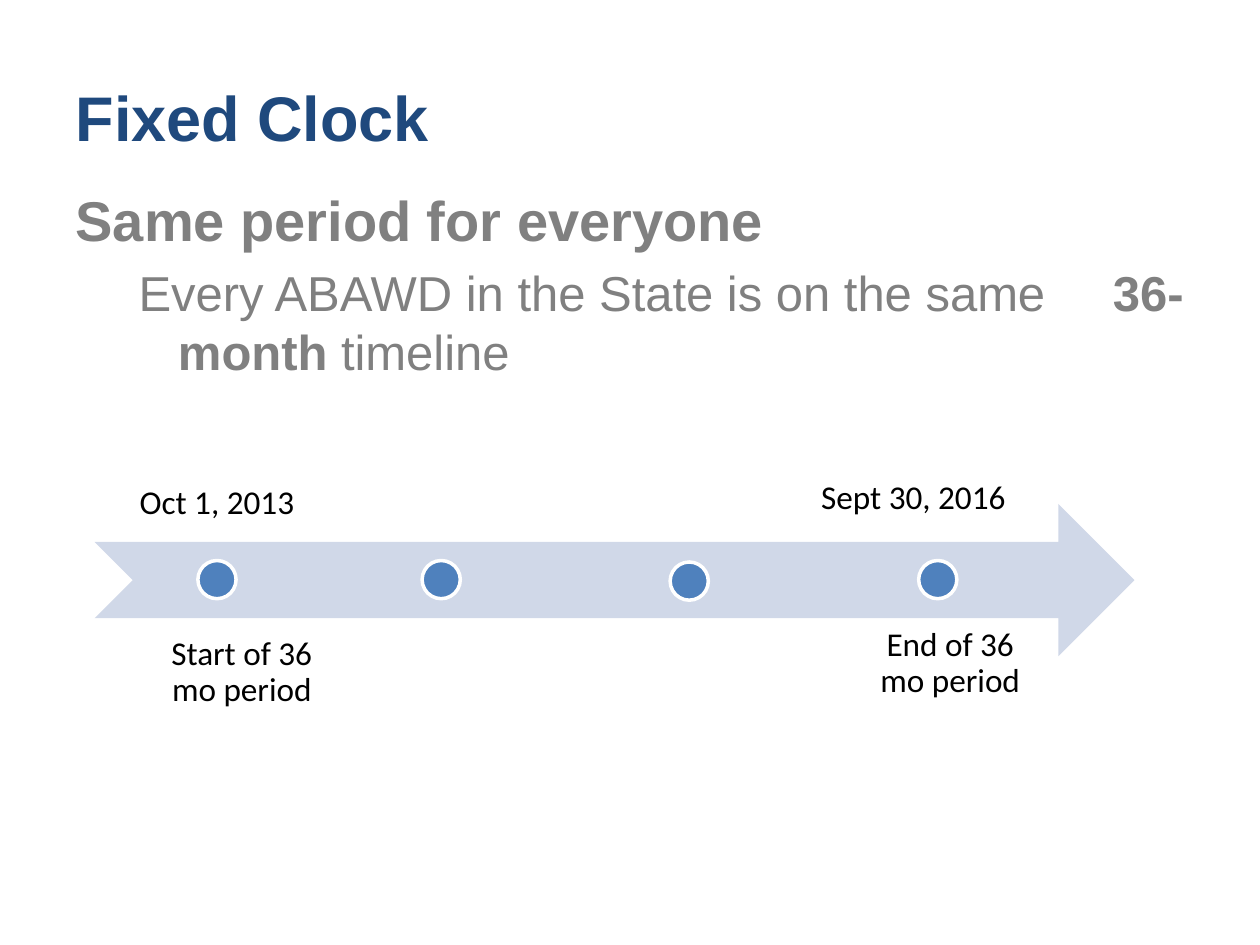
from lxml import etree
from pptx import Presentation
from pptx.dml.color import RGBColor
from pptx.enum.shapes import MSO_SHAPE
from pptx.enum.text import MSO_ANCHOR, PP_ALIGN
from pptx.oxml.ns import qn
from pptx.util import Cm, Pt

NAVY = RGBColor(0x1F, 0x49, 0x7D)
GRAY = RGBColor(0x80, 0x80, 0x80)
BLACK = RGBColor(0, 0, 0)
WHITE = RGBColor(0xFF, 0xFF, 0xFF)
PALE_BLUE = RGBColor(0xD0, 0xD8, 0xE8)
BLUE = RGBColor(0x4F, 0x81, 0xBD)
TOP, MIDDLE, BOTTOM = MSO_ANCHOR.TOP, MSO_ANCHOR.MIDDLE, MSO_ANCHOR.BOTTOM
LEFT, CENTER, RIGHT = PP_ALIGN.LEFT, PP_ALIGN.CENTER, PP_ALIGN.RIGHT


def add_text(p, text, size, color=GRAY, font="Arial", bold=False):
    r = p.add_run()
    r.text = text
    r.font.size = Pt(size)
    r.font.name = font
    r.font.bold = bold
    r.font.color.rgb = color
    return r


def place(sp, left, top, width, height):
    sp.left, sp.top, sp.width, sp.height = Cm(left), Cm(top), Cm(width), Cm(height)


prs = Presentation()
prs.slide_width, prs.slide_height = Cm(25.4), Cm(19.05)
s = prs.slides.add_slide(prs.slide_layouts[1])

# Title and body
title = s.shapes.title
place(title, 1.27, 0.76, 22.86, 3.18)
p = title.text_frame.paragraphs[0]
p.alignment = LEFT
add_text(p, "Fixed Clock", 36, NAVY, bold=True)

body = s.placeholders[1]
place(body, 1.27, 3.61, 22.86, 13.41)
tf = body.text_frame
heading, detail = tf.paragraphs[0], tf.add_paragraph()
detail.level = 1
for p in (heading, detail):
    etree.SubElement(p._p.get_or_add_pPr(), qn("a:buNone"))
heading.space_before = Pt(0)
add_text(heading, "Same period for everyone", 32, bold=True)
add_text(detail, "Every ABAWD in the State is on the same", 28)
gap = add_text(detail, " ", 28)
gap.font._element.set("spc", "3100")  # widens the one space before "36-month"
add_text(detail, "36-month ", 28, bold=True)
add_text(detail, "timeline", 28)

# Timeline
timeline = s.shapes.add_group_shape().shapes
arrow = timeline.add_shape(MSO_SHAPE.NOTCHED_RIGHT_ARROW,
                           Cm(1.91), Cm(10.16), Cm(20.96), Cm(3.07))
arrow.shadow.inherit = False
arrow.fill.solid()
arrow.fill.fore_color.rgb = PALE_BLUE
arrow.line.fill.background()

for left, top in ((3.99, 11.3), (8.51, 11.3), (13.51, 11.33), (18.52, 11.3)):
    dot = timeline.add_shape(MSO_SHAPE.OVAL, Cm(left), Cm(top), Cm(0.77), Cm(0.77))
    dot.shadow.inherit = False
    dot.fill.solid()
    dot.fill.fore_color.rgb = BLUE
    dot.line.color.rgb = WHITE
    dot.line.width = Pt(2)

labels = (
    ("Oct 1, 2013", 1.91, 7.82, 4.93, 3.07, BOTTOM, CENTER),
    ("Start of 36 mo period", 3.02, 12.45, 3.71, 3.07, TOP, CENTER),
    ("Sept 30, 2016", 14.71, 8.46, 5.94, 3.18, MIDDLE, RIGHT),
    ("End of 36 mo period", 17.3, 12.27, 3.71, 3.07, TOP, CENTER),
)
for text, left, top, width, height, anchor, alignment in labels:
    label = timeline.add_textbox(Cm(left), Cm(top), Cm(width), Cm(height))
    tf = label.text_frame
    tf.word_wrap = True
    tf.vertical_anchor = anchor
    tf.margin_left = tf.margin_right = tf.margin_top = tf.margin_bottom = Cm(0.38)
    p = tf.paragraphs[0]
    p.alignment = alignment
    p.line_spacing = 0.9
    add_text(p, text, 19, BLACK, font="Calibri")

prs.save("out.pptx")
